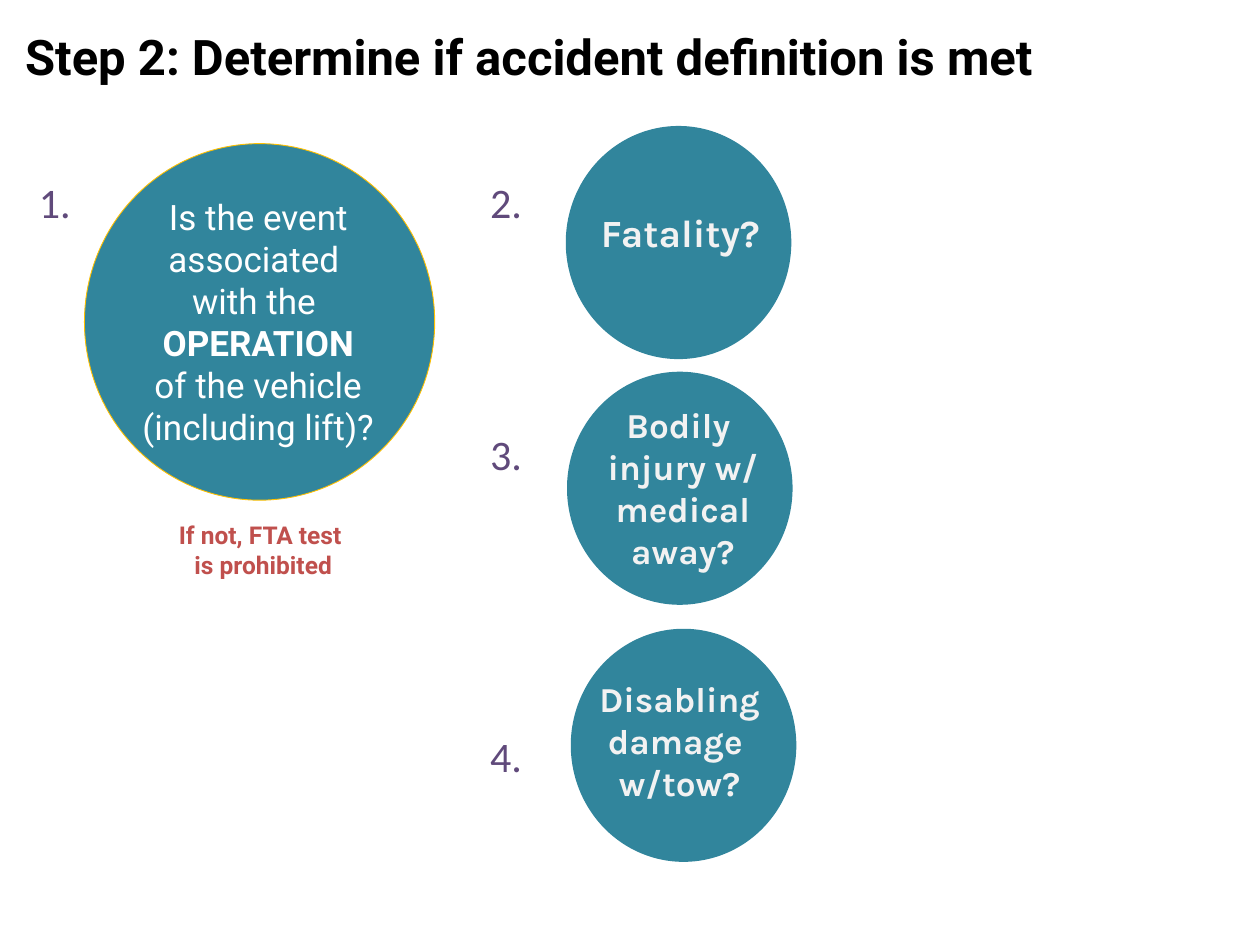
"""Build the slide on deciding whether the accident definition is met."""
from dataclasses import dataclass

import pptx
import pptx.dml.color
import pptx.enum.shapes
import pptx.enum.text
import pptx.util
from pptx.util import Inches


@dataclass(frozen=True)
class Theme:
    black: str = "000000"
    white: str = "FFFFFF"
    pale: str = "F2F2F2"
    teal: str = "31859C"
    gold: str = "FFC000"
    red: str = "C0504D"
    purple: str = "604A7B"
    title_size: int = 28
    number_size: int = 24
    large_size: int = 22
    body_size: int = 20
    note_size: int = 14


theme = Theme()
align = pptx.enum.text.PP_ALIGN
anchor = pptx.enum.text.MSO_ANCHOR


def color(value):
    return pptx.dml.color.RGBColor.from_string(value)


def write(box, lines, font, size, tint, bold=(), alignment=align.CENTER, middle=False):
    frame = box.text_frame
    frame.word_wrap = True
    frame.auto_size = pptx.enum.text.MSO_AUTO_SIZE.NONE
    frame.vertical_anchor = anchor.MIDDLE if middle else anchor.TOP
    frame.margin_left = frame.margin_top = frame.margin_right = frame.margin_bottom = 0
    for index, line in enumerate(lines):
        para = frame.paragraphs[0] if index == 0 else frame.add_paragraph()
        para.alignment = alignment
        span = para.add_run()
        span.text = line
        span.font.name = font
        span.font.size = pptx.util.Pt(size)
        span.font.bold = line in bold
        span.font.color.rgb = color(tint)


deck = pptx.Presentation()
deck.slide_width, deck.slide_height = Inches(10), Inches(7.5)
page = deck.slides.add_slide(deck.slide_layouts[5])

title = page.shapes.title
title.left, title.top = Inches(0.2), Inches(0.26)
title.width, title.height = Inches(9.61), Inches(0.46)
heading = ["Step 2: Determine if accident definition is met"]
write(title, heading, "Roboto", theme.title_size, theme.black, heading, align.LEFT)
title.text_frame.paragraphs[0].line_spacing = 0.9

circles = [
    (0.67, 1.14, 2.78, 2.83, theme.gold),
    (4.49, 1, 1.79, 1.85, None),
    (4.5, 2.95, 1.79, 1.85, None),
    (4.53, 4.99, 1.79, 1.85, None),
]
for *place, outline in circles:
    circle = page.shapes.add_shape(pptx.enum.shapes.MSO_SHAPE.OVAL, *map(Inches, place))
    circle.shadow.inherit = False
    circle.fill.solid()
    circle.fill.fore_color.rgb = color(theme.teal)
    if outline:
        circle.line.color.rgb = color(outline)
        circle.line.width = pptx.util.Pt(0.5)
    else:
        circle.line.fill.background()

operation = ["Is the event", "associated ", "with the ", "OPERATION",
             " of the vehicle ", "(including lift)?"]
box = page.shapes.add_textbox(Inches(1.06), Inches(1.54), Inches(1.98), Inches(2.02))
write(box, operation, "Roboto", theme.body_size, theme.white, ["OPERATION"], middle=True)

criteria = [
    ((4.72, 1.66, 1.36, 0.37), ["Fatality?"], theme.large_size),
    ((4.74, 3.2, 1.36, 1.35), ["Bodily ", "injury w/", "medical away?"], theme.body_size),
    ((4.73, 5.38, 1.33, 1.01), ["Disabling ", "damage ", "w/tow?"], theme.body_size),
]
for place, lines, size in criteria:
    box = page.shapes.add_textbox(*map(Inches, place))
    write(box, lines, "Karla", size, theme.pale, lines)

note = ["If not, FTA test", " is prohibited"]
box = page.shapes.add_textbox(Inches(0.49), Inches(4.13), Inches(3.15), Inches(0.47))
write(box, note, "Roboto", theme.note_size, theme.red, note)

numbers = [("1.", 0.31, 1.4), ("2.", 3.89, 1.4), ("3.", 3.89, 3.4), ("4.", 3.89, 5.8)]
for number, left, top in numbers:
    box = page.shapes.add_textbox(Inches(left), Inches(top), Inches(0.37), Inches(0.4))
    write(box, [number], "Calibri", theme.number_size, theme.purple, alignment=align.LEFT)

deck.save("out.pptx")
